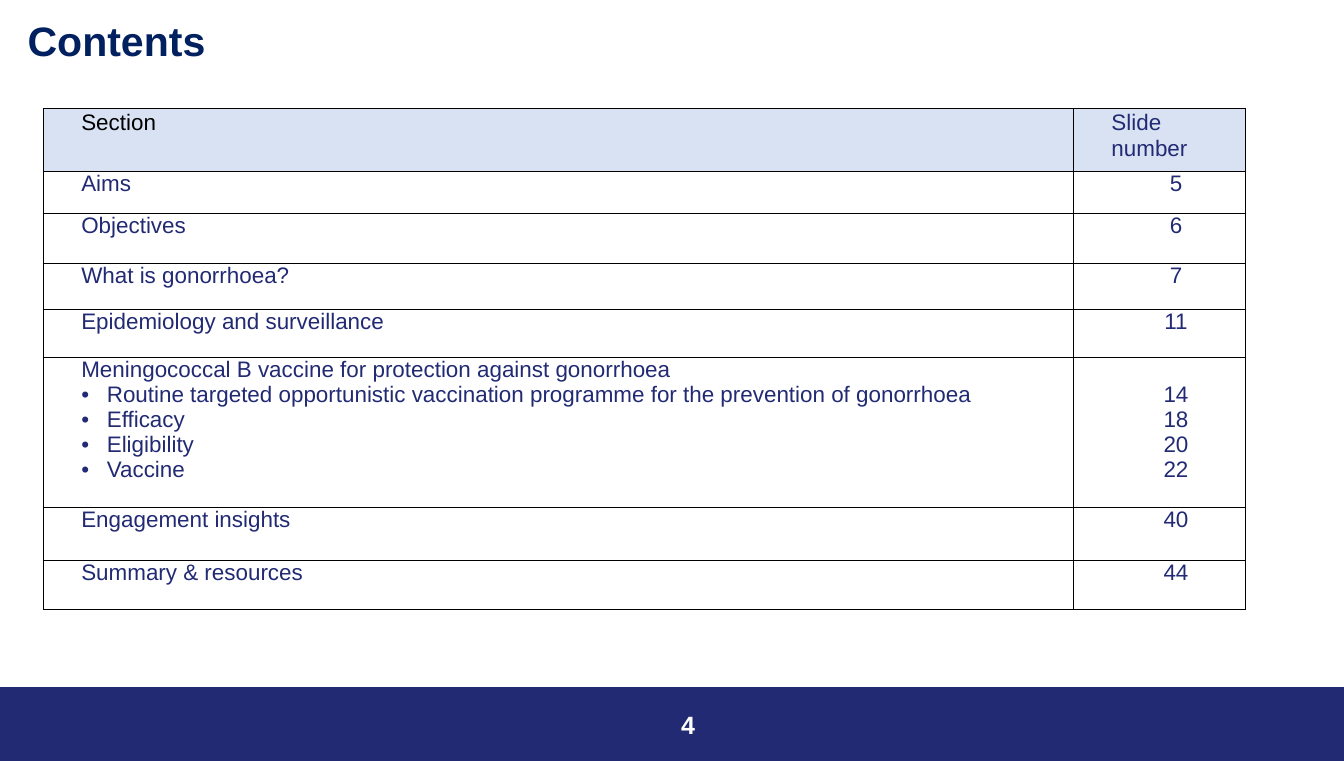
from pptx import Presentation
from pptx.dml.color import RGBColor
from pptx.enum.shapes import MSO_SHAPE
from pptx.enum.text import MSO_ANCHOR, PP_ALIGN
from pptx.oxml.ns import qn
from pptx.util import Inches, Pt
from lxml.etree import SubElement

NAVY = "212A73"
COLUMNS = [15.33, 2.56]
LINE = 0.37  # height of one line of table text

# Row height, section, bullets below it, slide numbers
ROWS = [
    (0.62, "Aims", [], ["5"]),
    (0.75, "Objectives", [], ["6"]),
    (0.68, "What is gonorrhoea?", [], ["7"]),
    (0.72, "Epidemiology and surveillance", [], ["11"]),
    (2.23, "Meningococcal B vaccine for protection against gonorrhoea",
     ["Routine targeted opportunistic vaccination programme for the prevention of gonorrhoea",
      "Efficacy", "Eligibility", "Vaccine"],
     ["14", "18", "20", "22"]),
    (0.79, "Engagement insights", [], ["40"]),
    (0.73, "Summary & resources", [], ["44"]),
]


def rgb(value):
    return RGBColor.from_string(value)


def add_run(p, text, size, color, bold=False):
    r = p.add_run()
    r.text = text
    r.font.name = "Arial"
    r.font.size = Pt(size)
    r.font.bold = bold
    r.font.color.rgb = rgb(color)


def set_indent(p, left, first=0, bullet=None):
    pPr = p._p.get_or_add_pPr()
    pPr.set("marL", str(Inches(left)))
    pPr.set("indent", str(Inches(first)))
    if bullet:
        SubElement(pPr, qn("a:buFont"), typeface="Arial")
        SubElement(pPr, qn("a:buChar"), char=bullet)


def add_borders(cell):
    tcPr = cell._tc.get_or_add_tcPr()
    for side in ("lnL", "lnR", "lnT", "lnB"):
        ln = SubElement(tcPr, qn(f"a:{side}"), w=str(Pt(1)))
        fill = SubElement(ln, qn("a:solidFill"))
        SubElement(fill, qn("a:srgbClr"), val="000000")


def fill_cell(cell, lines, bullets=(), color=NAVY, fill=None, align=None,
              spacing=None, top=0):
    cell.margin_left = cell.margin_right = Inches(0.07)
    cell.margin_top, cell.margin_bottom = Inches(top), 0
    add_borders(cell)
    if fill:
        cell.fill.solid()
        cell.fill.fore_color.rgb = rgb(fill)
    else:
        cell.fill.background()
    tf = cell.text_frame
    for i, text in enumerate([*lines, *bullets]):
        p = tf.add_paragraph() if i else tf.paragraphs[0]
        if i < len(lines):
            set_indent(p, 0.5)
        else:
            set_indent(p, 0.88, -0.38, "•")
        if align is not None:
            p.alignment = align
        if spacing:
            p.line_spacing = spacing
        add_run(p, text, 24, color)


def add_title(s, text):
    sp = s.shapes.title
    sp.left, sp.top = Inches(0.31), Inches(0.26)
    sp.width, sp.height = Inches(17.53), Inches(0.95)
    tf = sp.text_frame
    tf.vertical_anchor = MSO_ANCHOR.TOP
    p = tf.paragraphs[0]
    p.alignment = PP_ALIGN.LEFT
    p.line_spacing = 0.9
    add_run(p, text, 44, "002060", True)


def add_contents_table(s):
    heights = [0.94] + [row[0] for row in ROWS]
    table = s.shapes.add_table(len(heights), len(COLUMNS), Inches(0.64), Inches(1.61),
                               Inches(sum(COLUMNS)), Inches(sum(heights))).table
    table.first_row = table.horz_banding = False
    for column, width in zip(table.columns, COLUMNS):
        column.width = Inches(width)
    for row, height in zip(table.rows, heights):
        row.height = Inches(height)
    for c, (text, color) in enumerate([("Section", "000000"), ("Slide number", NAVY)]):
        fill_cell(table.cell(0, c), [text], color=color, fill="D9E2F3", spacing=1.07)
    for i, (_, section, bullets, numbers) in enumerate(ROWS, 1):
        fill_cell(table.cell(i, 0), [section], bullets)
        # Numbers of a bulleted section start beside its first bullet
        fill_cell(table.cell(i, 1), numbers, align=PP_ALIGN.CENTER,
                  top=LINE if bullets else 0)


def add_footer(s, number):
    bar = s.shapes.add_shape(MSO_SHAPE.RECTANGLE, 0, Inches(10.22), Inches(20), Inches(1.1))
    bar.shadow.inherit = False
    bar.fill.solid()
    bar.fill.fore_color.rgb = rgb(NAVY)
    bar.line.color.rgb = rgb(NAVY)
    bar.line.width = Pt(1)
    box = s.shapes.add_textbox(Inches(9.59), Inches(10.48), Inches(0.85), Inches(0.6))
    tf = box.text_frame
    tf.word_wrap = True
    tf.vertical_anchor = MSO_ANCHOR.MIDDLE
    p = tf.paragraphs[0]
    p.alignment = PP_ALIGN.RIGHT
    add_run(p, number, 26.8, "FFFFFF", True)


def main():
    prs = Presentation()
    prs.slide_width, prs.slide_height = Inches(20), Inches(11.32)
    s = prs.slides.add_slide(prs.slide_layouts[5])
    add_title(s, "Contents")
    add_contents_table(s)
    add_footer(s, "4")
    prs.save("out.pptx")


if __name__ == "__main__":
    main()
